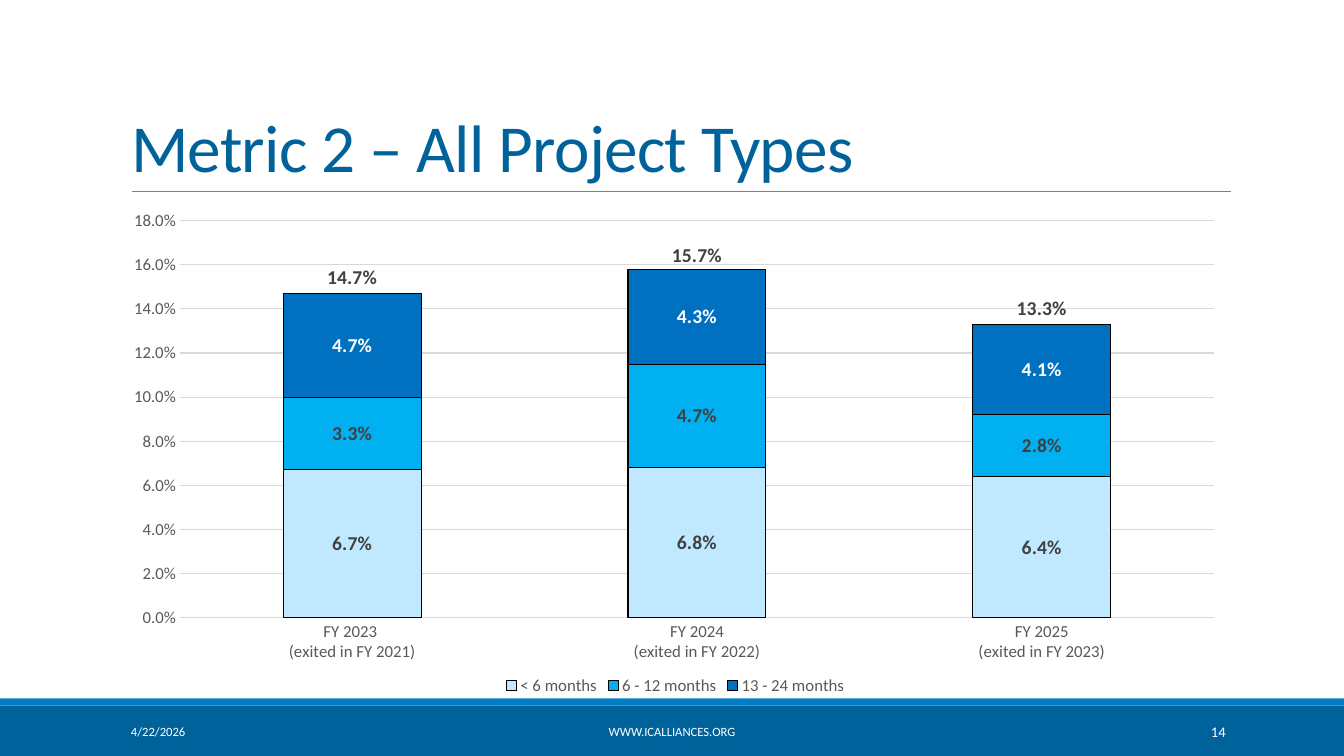
from dataclasses import dataclass

import pptx
import pptx.chart.data
import pptx.dml.color
import pptx.enum.chart
import pptx.enum.shapes
import pptx.enum.text
import pptx.oxml
import pptx.oxml.ns
import pptx.util
from pptx.util import Cm

Align = pptx.enum.text.PP_ALIGN
Anchor = pptx.enum.text.MSO_ANCHOR
LabelPosition = pptx.enum.chart.XL_LABEL_POSITION
qn = pptx.oxml.ns.qn


@dataclass(frozen=True)
class Theme:
    font: str = "Calibri"
    navy: str = "00629B"
    blue: str = "007EC4"
    white: str = "FFFFFF"
    black: str = "000000"
    rule: str = "808080"
    grid: str = "D9D9D9"
    axis_text: str = "595959"
    label_text: str = "404040"
    title_size: float = 48
    axis_size: float = 12
    label_size: float = 14
    footer_size: float = 9
    number_size: float = 10.5


@dataclass(frozen=True)
class Box:
    left: float
    top: float
    width: float
    height: float

    def lengths(self):
        return Cm(self.left), Cm(self.top), Cm(self.width), Cm(self.height)


THEME = Theme()
PERCENT = "0.0%"
CATEGORIES = [
    "FY 2023 \n(exited in FY 2021)",
    "FY 2024\n(exited in FY 2022)",
    "FY 2025\n(exited in FY 2023)",
]
# name, values, fill, label colour
STACKS = [
    ("< 6 months", (0.067, 0.068, 0.064), "C0E9FF", THEME.label_text),
    ("6 - 12 months", (0.033, 0.047, 0.028), "00B0F0", THEME.label_text),
    ("13 - 24 months", (0.047, 0.043, 0.041), "0070C0", THEME.white),
]
TOTALS = ("Series 4", (0.147, 0.157, 0.133))
PLOT_LAYOUT = {"x": 0.053, "y": 0.057, "w": 0.933, "h": 0.782}


def rgb(colour):
    return pptx.dml.color.RGBColor.from_string(colour)


def style_font(font, size, colour, bold=False):
    font.name = THEME.font
    font.size = pptx.util.Pt(size)
    font.bold = bold
    font.color.rgb = rgb(colour)


def style_line(line, colour, width):
    line.color.rgb = rgb(colour)
    line.width = pptx.util.Pt(width)


def chart_xml(text):
    return pptx.oxml.parse_xml(text.replace(">", f" {pptx.oxml.ns.nsdecls('c')}>", 1))


def add_band(page, box, colour):
    band = page.shapes.add_shape(
        pptx.enum.shapes.MSO_SHAPE.RECTANGLE, *box.lengths())
    band.shadow.inherit = False
    band.fill.solid()
    band.fill.fore_color.rgb = rgb(colour)
    band.line.fill.background()


def add_title(page, box, text):
    """Fill the title placeholder and rule a line under it."""
    title = page.shapes.title
    title.left, title.top, title.width, title.height = box.lengths()
    frame = title.text_frame
    frame.word_wrap = True
    frame.auto_size = pptx.enum.text.MSO_AUTO_SIZE.NONE
    frame.vertical_anchor = Anchor.BOTTOM
    para = frame.paragraphs[0]
    para.alignment = Align.LEFT
    para.line_spacing = 0.85
    span = para.add_run()
    span.text = text
    style_font(span.font, THEME.title_size, THEME.navy)
    span.font._element.set("spc", "-50")

    bottom = Cm(box.top + box.height)
    rule = page.shapes.add_connector(
        pptx.enum.shapes.MSO_CONNECTOR.STRAIGHT,
        Cm(box.left + 0.28), bottom, Cm(box.left + box.width + 0.02), bottom)
    style_line(rule.line, THEME.rule, 0.5)
    rule._element.spPr.append(pptx.oxml.parse_xml(
        f"<a:effectLst {pptx.oxml.ns.nsdecls('a')}/>"))


def move_totals_to_line(chart):
    """Turn the last column series into a line series on the same axes."""
    bars = chart._chartSpace.find(".//" + qn("c:barChart"))
    totals = bars.findall(qn("c:ser"))[-1]
    for bar_only in totals.findall(qn("c:invertIfNegative")):
        totals.remove(bar_only)
    line_plot = chart_xml(
        '<c:lineChart><c:grouping val="standard"/><c:varyColors val="0"/>'
        '<c:marker val="1"/></c:lineChart>')
    line_plot.insert(2, totals)
    for axis in bars.findall(qn("c:axId")):
        line_plot.append(chart_xml(f'<c:axId val="{axis.get("val")}"></c:axId>'))
    bars.addnext(line_plot)


def set_plot_layout(chart):
    area = chart._chartSpace.find(".//" + qn("c:plotArea"))
    for layout in area.findall(qn("c:layout")):
        area.remove(layout)
    sizes = "".join(f'<c:{key} val="{value}"/>' for key, value in PLOT_LAYOUT.items())
    area.insert(0, chart_xml(
        '<c:layout><c:manualLayout><c:layoutTarget val="inner"/>'
        '<c:xMode val="edge"/><c:yMode val="edge"/>'
        f"{sizes}</c:manualLayout></c:layout>"))


def style_labels(series, colour, position):
    labels = series.data_labels
    labels.show_value = True
    labels.number_format = PERCENT
    labels.number_format_is_linked = False
    labels.position = position
    style_font(labels.font, THEME.label_size, colour, bold=True)


def style_axes(chart):
    for axis in (chart.category_axis, chart.value_axis):
        axis.major_tick_mark = axis.minor_tick_mark = pptx.enum.chart.XL_TICK_MARK.NONE
        style_font(axis.tick_labels.font, THEME.axis_size, THEME.axis_text)
    style_line(chart.category_axis.format.line, THEME.grid, 0.75)
    values = chart.value_axis
    values.minimum_scale, values.maximum_scale, values.major_unit = 0, 0.18, 0.02
    values.format.line.fill.background()
    values.has_major_gridlines = True
    style_line(values.major_gridlines.format.line, THEME.grid, 0.75)
    values.tick_labels.number_format = PERCENT
    values.tick_labels.number_format_is_linked = False


def style_legend(chart):
    chart.has_legend = True
    legend = chart.legend
    legend.position = pptx.enum.chart.XL_LEGEND_POSITION.BOTTOM
    legend.include_in_layout = False
    style_font(legend.font, THEME.axis_size, THEME.axis_text)
    legend._element.find(qn("c:legendPos")).addnext(chart_xml(
        f'<c:legendEntry><c:idx val="{len(STACKS)}"/><c:delete val="1"/></c:legendEntry>'))


def add_returns_chart(page, box):
    chart_data = pptx.chart.data.CategoryChartData(number_format=PERCENT)
    chart_data.categories = CATEGORIES
    for name, values, *_ in STACKS + [TOTALS]:
        chart_data.add_series(name, values)
    chart = page.shapes.add_chart(
        pptx.enum.chart.XL_CHART_TYPE.COLUMN_STACKED, *box.lengths(), chart_data).chart
    chart.has_title = False
    style_font(chart.font, 10, THEME.black)
    move_totals_to_line(chart)
    set_plot_layout(chart)

    columns, line_plot = chart.plots
    columns.gap_width, columns.overlap = 150, 100
    columns.vary_by_categories = False
    for series, (_, _, fill, label_colour) in zip(columns.series, STACKS):
        series.format.fill.solid()
        series.format.fill.fore_color.rgb = rgb(fill)
        style_line(series.format.line, THEME.black, 0.75)
        style_labels(series, label_colour, LabelPosition.CENTER)
    totals = line_plot.series[0]
    totals.format.line.fill.background()
    totals.marker.style = pptx.enum.chart.XL_MARKER_STYLE.NONE
    totals.smooth = False
    style_labels(totals, THEME.label_text, LabelPosition.ABOVE)
    style_axes(chart)
    style_legend(chart)


def add_footer(page, box):
    stripe = 0.18
    add_band(page, Box(box.left, box.top + stripe, box.width, box.height - stripe), THEME.navy)
    add_band(page, Box(box.left, box.top, box.width, stripe), THEME.blue)
    for text, left, width, align, size in (
        ("4/22/2026", 3.05, 6.86, Align.LEFT, THEME.footer_size),
        ("WWW.ICALLIANCES.ORG", 10.24, 13.39, Align.CENTER, THEME.footer_size),
        ("14", 27.51, 3.63, Align.RIGHT, THEME.number_size),
    ):
        place = Box(box.left + left, box.top + 0.33, width, 1.02)
        frame = page.shapes.add_textbox(*place.lengths()).text_frame
        frame.word_wrap = True
        frame.vertical_anchor = Anchor.MIDDLE
        para = frame.paragraphs[0]
        para.alignment = align
        span = para.add_run()
        span.text = text
        style_font(span.font, size, THEME.white)


def main():
    deck = pptx.Presentation()
    deck.slide_width, deck.slide_height = Cm(33.87), Cm(19.05)
    page = deck.slides.add_slide(deck.slide_layouts.get_by_name("Title Only"))
    add_footer(page, Box(0, 17.6, 33.87, 1.45))
    add_title(page, Box(3.05, 0.79, 27.94, 4.04), "Metric 2 – All Project Types")
    add_returns_chart(page, Box(3.05, 4.83, 27.94, 12.8))
    deck.save("out.pptx")


if __name__ == "__main__":
    main()
